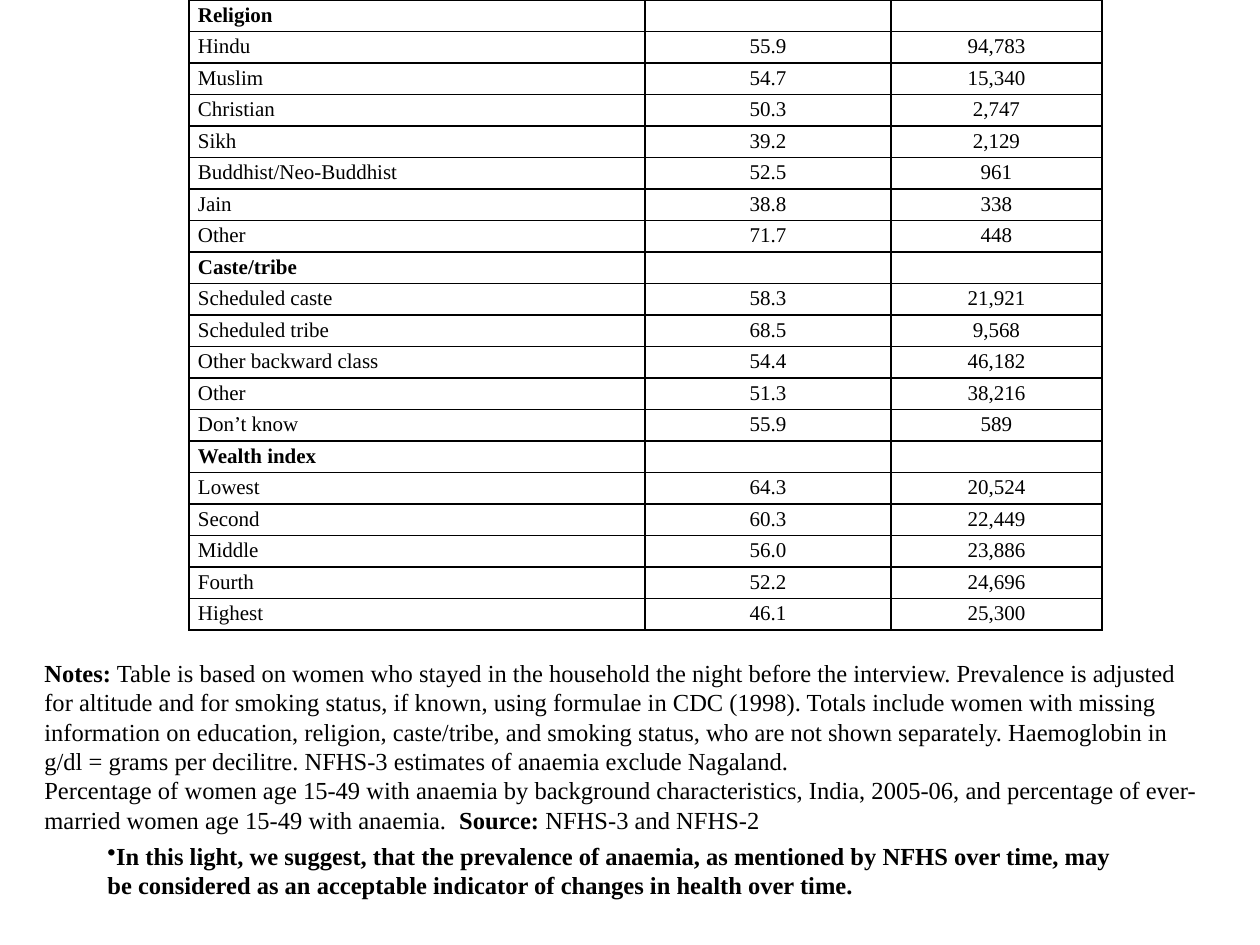
"""Build a slide with an anaemia prevalence table, its notes and a conclusion."""
from typing import NamedTuple

from lxml import etree
from pptx import Presentation
from pptx import util as u
from pptx.dml.color import RGBColor
from pptx.enum import text
from pptx.oxml.ns import qn

EMU_PER_PX = 914400 / 126
FONT = "Times New Roman"
BLACK = "000000"
COLUMNS = (456, 246, 211)
TABLE_HEIGHT = 630


class Row(NamedTuple):
    """A table row; a row without figures is a group heading."""
    label: str
    percent: str = ""
    women: str = ""


class Span(NamedTuple):
    """A stretch of text in one weight."""
    words: str
    bold: bool = False


class Box(NamedTuple):
    """A rectangle in px."""
    x: int
    y: int
    w: int
    h: int


ROWS = (
    Row("Religion"),
    Row("Hindu", "55.9", "94,783"),
    Row("Muslim", "54.7", "15,340"),
    Row("Christian", "50.3", "2,747"),
    Row("Sikh", "39.2", "2,129"),
    Row("Buddhist/Neo-Buddhist", "52.5", "961"),
    Row("Jain", "38.8", "338"),
    Row("Other", "71.7", "448"),
    Row("Caste/tribe"),
    Row("Scheduled caste", "58.3", "21,921"),
    Row("Scheduled tribe", "68.5", "9,568"),
    Row("Other backward class", "54.4", "46,182"),
    Row("Other", "51.3", "38,216"),
    Row("Don’t know", "55.9", "589"),
    Row("Wealth index"),
    Row("Lowest", "64.3", "20,524"),
    Row("Second", "60.3", "22,449"),
    Row("Middle", "56.0", "23,886"),
    Row("Fourth", "52.2", "24,696"),
    Row("Highest", "46.1", "25,300"),
)
NOTES = (
    (Span("Notes:", True),
     Span(" Table is based on women who stayed in the household the night before the "
          "interview. Prevalence is adjusted for altitude and for smoking status, if known, "
          "using formulae in CDC (1998). Totals include women with missing information on "
          "education, religion, caste/tribe, and smoking status, who are not shown "
          "separately. Haemoglobin in g/dl = grams per decilitre. NFHS-3 estimates of "
          "anaemia exclude Nagaland.")),
    (Span("Percentage of women age 15-49 with anaemia by background characteristics, India, "
          "2005-06, and percentage of ever-married women age 15-49 with anaemia.  "),
     Span("Source:", True),
     Span(" NFHS-3 and NFHS-2")),
)
CONCLUSION = (
    (Span("In this light, we suggest, that the prevalence of anaemia, as mentioned by NFHS "
          "over time, may be considered as an acceptable indicator of changes in health "
          "over time.", True),),
)


def px(n: int) -> u.Emu:
    """Turn px into EMU."""
    return u.Emu(round(n * EMU_PER_PX))


def color(value: str) -> RGBColor:
    """Turn a hex string into a colour."""
    return RGBColor.from_string(value)


def style(r, size: int, bold: bool) -> None:
    """Format one run."""
    r.font.name = FONT
    r.font.size = u.Pt(size)
    r.font.bold = bold
    r.font.color.rgb = color(BLACK)


def add_borders(cell) -> None:
    """Draw a thin line on every side of a cell."""
    tc_pr = cell._tc.get_or_add_tcPr()
    for side in ("lnL", "lnR", "lnT", "lnB"):
        ln = etree.SubElement(tc_pr, qn(f"a:{side}"), w=str(u.Pt(1)))
        fill = etree.SubElement(ln, qn("a:solidFill"))
        etree.SubElement(fill, qn("a:srgbClr"), val=BLACK)


def fill_cell(cell, words: str, bold: bool, centred: bool) -> None:
    """Write and format one table cell."""
    add_borders(cell)
    cell.fill.background()
    cell.margin_left = cell.margin_right = px(9)
    cell.margin_top = cell.margin_bottom = 0
    p = cell.text_frame.paragraphs[0]
    p.line_spacing = 1.15
    if centred:
        p.alignment = text.PP_ALIGN.CENTER
    if words:
        p.text = words
        style(p.runs[0], 12, bold)
    else:
        etree.SubElement(p._p, qn("a:endParaRPr"), sz="1200")


def add_prevalence_table(s, x: int, y: int) -> None:
    """Add the table with equal row heights."""
    frame = s.shapes.add_table(len(ROWS), len(COLUMNS), px(x), px(y),
                               px(sum(COLUMNS)), px(TABLE_HEIGHT))
    table = frame.table
    table.first_row = table.horz_banding = False
    for column, width in zip(table.columns, COLUMNS):
        column.width = px(width)
    for i, row in enumerate(ROWS):
        table.rows[i].height = px(TABLE_HEIGHT) // len(ROWS)
        for j, words in enumerate(row):
            fill_cell(table.cell(i, j), words, not row.percent, j > 0)


def add_text(s, box: Box, paragraphs: tuple, anchor: text.MSO_ANCHOR):
    """Add a wrapped text box and return its text frame."""
    sp = s.shapes.add_textbox(*map(px, box))
    tf = sp.text_frame
    tf.word_wrap = True
    tf.vertical_anchor = anchor
    for i, spans in enumerate(paragraphs):
        p = tf.add_paragraph() if i else tf.paragraphs[0]
        for span in spans:
            r = p.add_run()
            r.text = span.words
            style(r, 14, span.bold)
    return tf


def add_bullet(p) -> None:
    """Give a paragraph a bullet without an indent."""
    p_pr = p._p.get_or_add_pPr()
    p_pr.set("marL", "0")
    p_pr.set("indent", "0")
    etree.SubElement(p_pr, qn("a:buChar"), char="•")


def main() -> None:
    """Build and save the slide."""
    prs = Presentation()
    prs.slide_width, prs.slide_height = px(1260), px(945)
    s = prs.slides.add_slide(prs.slide_layouts[6])
    add_prevalence_table(s, 189, 0)
    add_text(s, Box(32, 651, 1187, 190), NOTES, text.MSO_ANCHOR.MIDDLE)
    tf = add_text(s, Box(95, 841, 1050, 97), CONCLUSION, text.MSO_ANCHOR.TOP)
    tf.margin_top = tf.margin_bottom = 0
    add_bullet(tf.paragraphs[0])
    prs.save("out.pptx")


if __name__ == "__main__":
    main()
